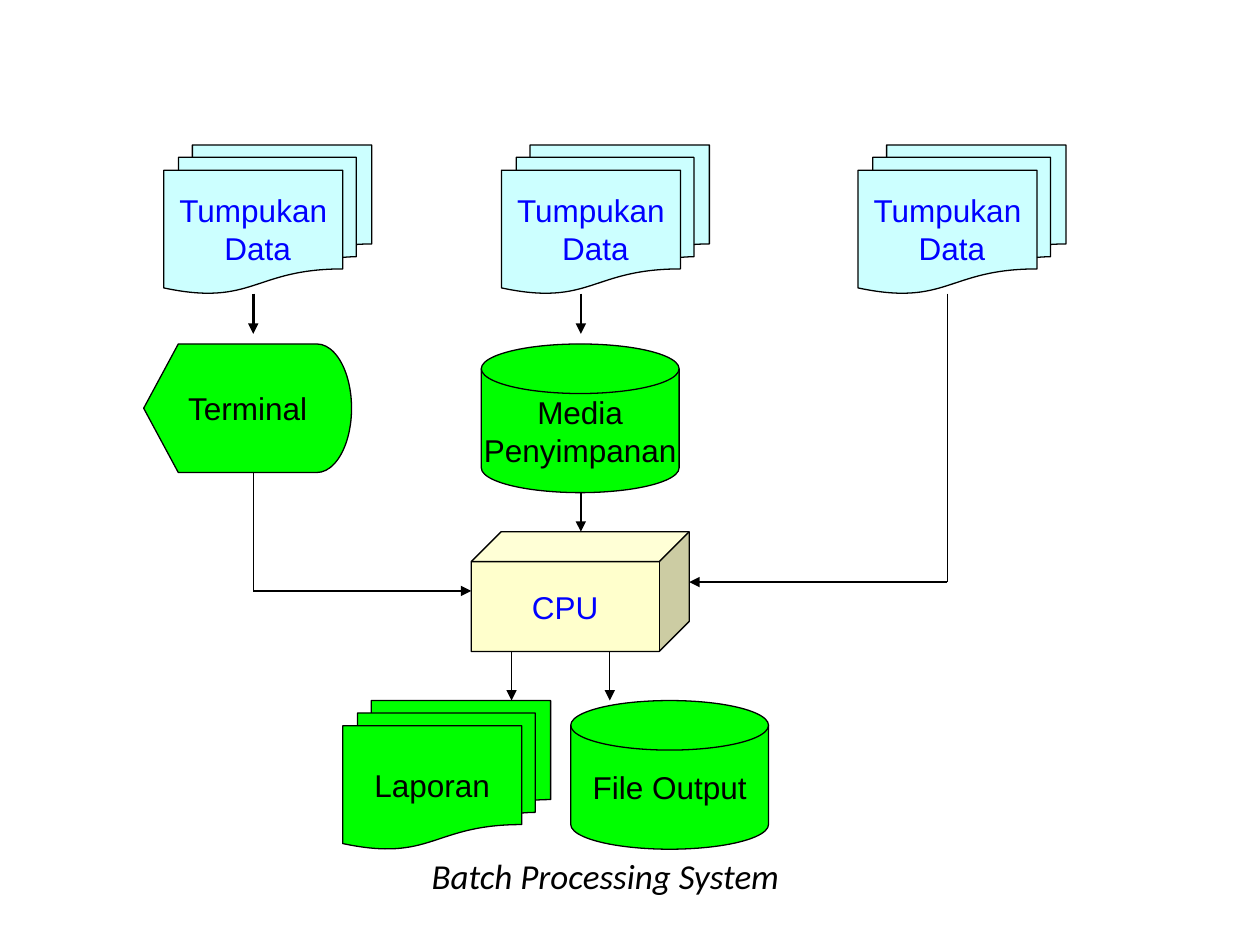
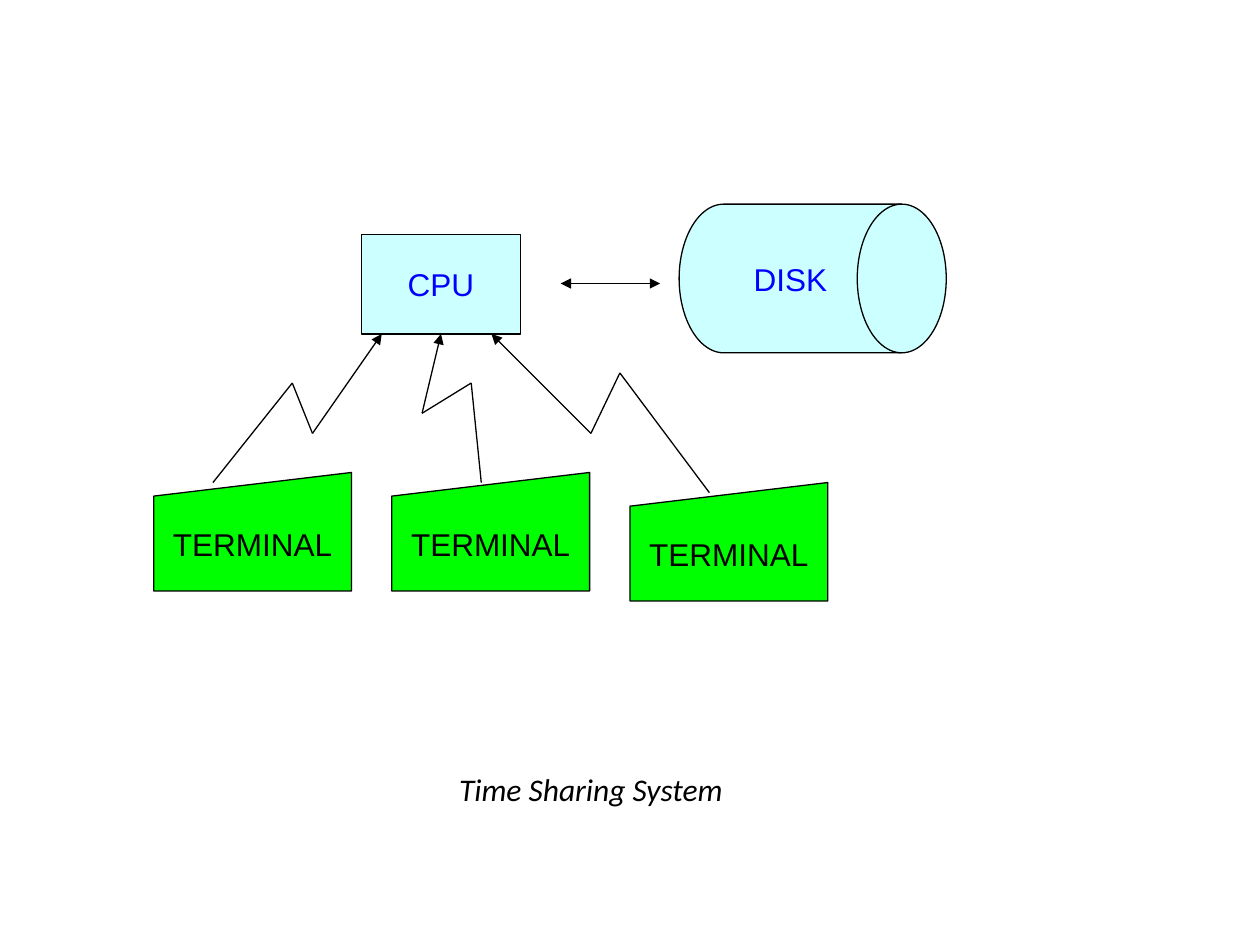
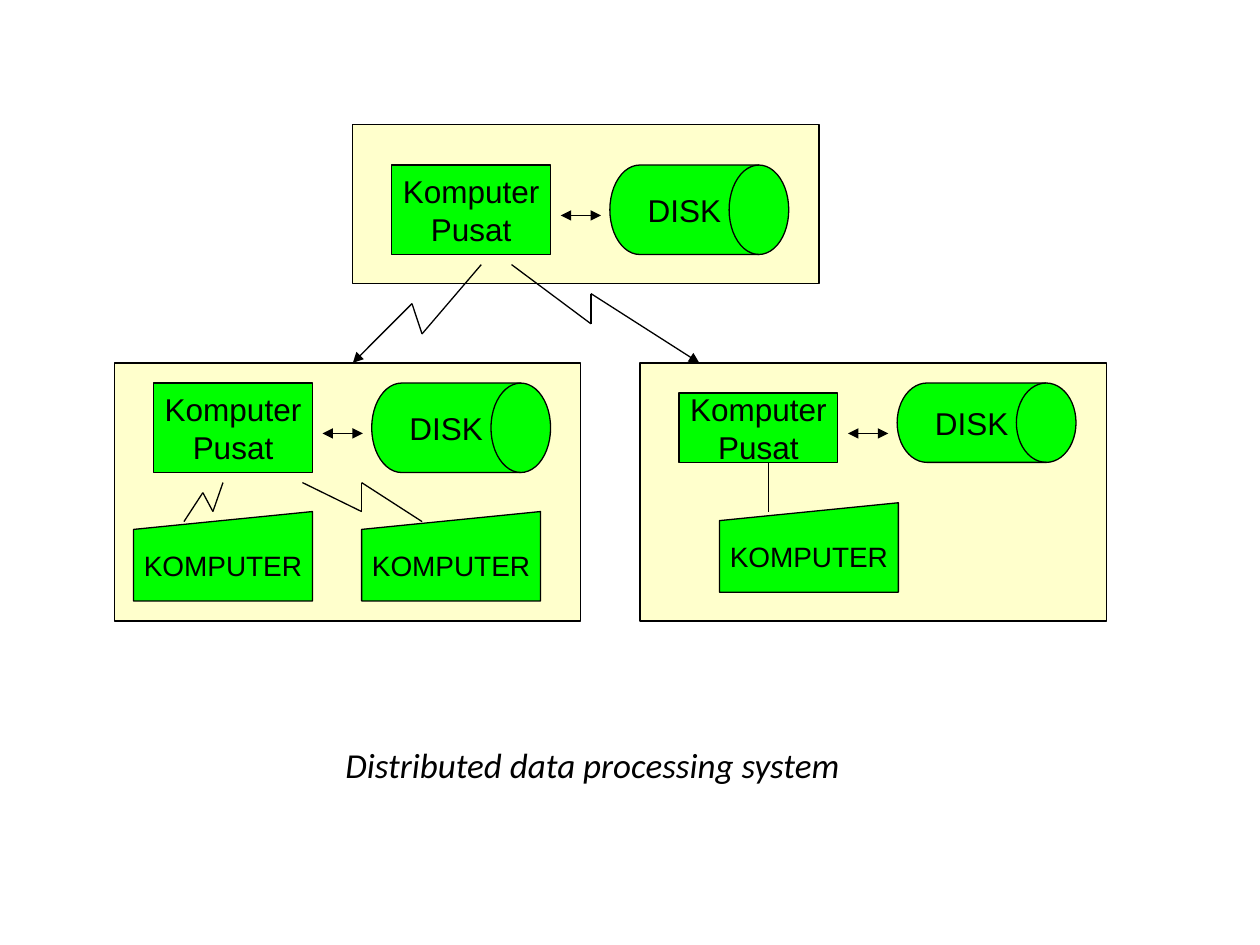
from dataclasses import dataclass

from lxml import etree
from pptx import Presentation
from pptx.dml.color import RGBColor
from pptx.enum.shapes import MSO_CONNECTOR, MSO_SHAPE
from pptx.enum.text import MSO_ANCHOR, MSO_AUTO_SIZE, PP_ALIGN
from pptx.oxml.ns import qn
from pptx.util import Inches, Pt

STRAIGHT = MSO_CONNECTOR.STRAIGHT
RECTANGLE = MSO_SHAPE.RECTANGLE
CUBE = MSO_SHAPE.CUBE
PROCESS = MSO_SHAPE.FLOWCHART_PROCESS
DOCUMENTS = MSO_SHAPE.FLOWCHART_MULTIDOCUMENT
STORAGE = MSO_SHAPE.FLOWCHART_MAGNETIC_DISK
DRUM = MSO_SHAPE.FLOWCHART_DIRECT_ACCESS_STORAGE
DISPLAY = MSO_SHAPE.FLOWCHART_DISPLAY
MANUAL_INPUT = MSO_SHAPE.FLOWCHART_MANUAL_INPUT
MIDDLE, TOP = MSO_ANCHOR.MIDDLE, MSO_ANCHOR.TOP
CENTER, LEFT = PP_ALIGN.CENTER, PP_ALIGN.LEFT
NO_AUTOFIT = MSO_AUTO_SIZE.NONE
TITLE_ONLY = 5
BOTTOM_SIDE = 2


@dataclass(frozen=True)
class Theme:
    black: str = "000000"
    blue: str = "0000FF"
    aqua: str = "CCFFFF"
    green: str = "00FF00"
    cream: str = "FFFFCC"
    label_font: str = "Arial"
    title_font: str = "Calibri"
    title_size: int = 20
    label_size: int = 18
    small_size: int = 16
    thin: float = 0.75
    thick: float = 1.5


THEME = Theme()


@dataclass(frozen=True)
class Box:
    left: float
    top: float
    width: float
    height: float

    def inner(self, left, top, width, height):
        return Box(self.left + left, self.top + top, width, height)

    def point(self, across, down):
        return Inches(self.left + across), Inches(self.top + down)

    def lengths(self):
        return [Inches(length) for length in (self.left, self.top, self.width, self.height)]


def write_text(frame, text, *, font=THEME.label_font, size=THEME.label_size, color=THEME.black,
               italic=False, align=CENTER, anchor=MIDDLE, wrap=False, line_spacing=None,
               space_before=0):
    frame.word_wrap = wrap
    frame.auto_size = NO_AUTOFIT
    frame.vertical_anchor = anchor
    for index, line in enumerate(text.split("\n")):
        paragraph = frame.add_paragraph() if index else frame.paragraphs[0]
        paragraph.alignment = align
        paragraph.line_spacing = line_spacing
        paragraph.space_before = Pt(space_before)
        run = paragraph.add_run()
        run.text = line
        run.font.name = font
        run.font.size = Pt(size)
        run.font.italic = italic
        run.font.color.rgb = RGBColor.from_string(color)


def add_node(slide, kind, box, text="", fill=THEME.green, **text_format):
    shape = slide.shapes.add_shape(kind, *box.lengths())
    shape.shadow.inherit = False
    shape.fill.solid()
    shape.fill.fore_color.rgb = RGBColor.from_string(fill)
    shape.line.color.rgb = RGBColor.from_string(THEME.black)
    shape.line.width = Pt(THEME.thin)
    if text:
        write_text(shape.text_frame, text, **text_format)
    return shape


def add_line(slide, start, end, width, arrows):
    connector = slide.shapes.add_connector(STRAIGHT, *start, *end)
    connector.line.color.rgb = RGBColor.from_string(THEME.black)
    connector.line.width = Pt(width)
    properties = connector.element.spPr
    etree.SubElement(properties, qn("a:effectLst"))
    for arrow in arrows:
        etree.SubElement(properties.find(qn("a:ln")), qn(arrow), type="triangle")
    return connector


def add_route(slide, box, points, width=THEME.thin, arrows=("a:tailEnd",)):
    places = [box.point(*point) for point in points]
    for start, end in zip(places[:-2], places[1:-1]):
        add_line(slide, start, end, width, ())
    return add_line(slide, places[-2], places[-1], width, arrows)


def add_double_arrow(slide, box, left, right, height):
    add_route(slide, box, [(left, height), (right, height)], arrows=("a:headEnd", "a:tailEnd"))


def add_titled_slide(presentation, title, box, **text_format):
    slide = presentation.slides.add_slide(presentation.slide_layouts[TITLE_ONLY])
    placeholder = slide.shapes.title
    placeholder.left, placeholder.top, placeholder.width, placeholder.height = box.lengths()
    title_format = {"font": THEME.title_font, "size": THEME.title_size, "italic": True, "wrap": True}
    write_text(placeholder.text_frame, title, **{**title_format, **text_format})
    return slide


def add_batch_inputs(slide, box):
    for left in (0.16, 2.84, 5.67):
        add_node(slide, DOCUMENTS, box.inner(left, 0, 1.65, 1.18), "Tumpukan\n Data",
                 fill=THEME.aqua, color=THEME.blue)
    for across in (0.87, 3.47):
        add_route(slide, box, [(across, 1.18), (across, 1.5)], width=THEME.thick)
    add_node(slide, DISPLAY, box.inner(0, 1.58, 1.65, 1.02), "Terminal")
    add_node(slide, STORAGE, box.inner(2.68, 1.58, 1.57, 1.18), "Media\nPenyimpanan")


def add_batch_processor(slide, box):
    add_node(slide, CUBE, box.inner(1.73, 1.89, 1.73, 0.95), "CPU",
             fill=THEME.cream, color=THEME.blue)
    add_route(slide, box, [(2.6, 1.58), (2.6, 1.89)], width=THEME.thick)
    add_route(slide, box, [(0, 1.42), (0, 2.36), (1.73, 2.36)])
    add_route(slide, box, [(5.51, 0), (5.51, 2.29), (3.46, 2.29)])


def add_batch_outputs(slide, box):
    add_node(slide, DOCUMENTS, box.inner(0, 0.39, 1.65, 1.18), "Laporan")
    add_node(slide, STORAGE, box.inner(1.81, 0.39, 1.57, 1.18), "File Output")
    for across in (1.34, 2.12):
        add_route(slide, box, [(across, 0), (across, 0.39)])


def build_batch_slide(presentation):
    slide = add_titled_slide(presentation, "Batch Processing System", Box(2.72, 6.59, 4.17, 0.71))
    add_batch_inputs(slide, Box(1.14, 1.15, 7.32, 2.76))
    add_batch_processor(slide, Box(2.01, 2.33, 5.51, 2.84))
    add_batch_outputs(slide, Box(2.72, 5.17, 3.38, 1.57))


def add_shared_processor(slide, box):
    cpu = add_node(slide, PROCESS, box.inner(0, 0.24, 1.26, 0.79), "CPU",
                   fill=THEME.aqua, color=THEME.blue)
    add_node(slide, DRUM, box.inner(2.52, 0, 2.12, 1.18), "DISK",
             fill=THEME.aqua, color=THEME.blue)
    add_double_arrow(slide, box, 1.58, 2.37, 0.63)
    return cpu


def add_terminals(slide, box, cpu):
    for index, top in enumerate((1.1, 1.1, 1.18)):
        add_node(slide, MANUAL_INPUT, box.inner(index * 1.89, top, 1.57, 0.94), "TERMINAL")
    add_route(slide, box, [(0.47, 1.18), (1.1, 0.39), (1.26, 0.79), (1.81, 0)])
    middle = add_route(slide, box, [(2.6, 1.18), (2.52, 0.39), (2.13, 0.63), (2.28, 0)])
    middle.end_connect(cpu, BOTTOM_SIDE)
    add_route(slide, box, [(4.41, 1.26), (3.7, 0.31), (3.47, 0.79), (2.68, 0)])


def build_time_sharing_slide(presentation):
    slide = add_titled_slide(presentation, "Time Sharing System", Box(3.35, 5.95, 2.68, 0.63),
                             size=THEME.label_size)
    cpu = add_shared_processor(slide, Box(2.87, 1.62, 4.64, 1.18))
    add_terminals(slide, Box(1.22, 2.65, 5.35, 2.12), cpu)


def add_site(slide, box, computer_top, disk_top, computer_height=0.71, disk_height=0.71,
             workstations=(), wires=()):
    add_node(slide, RECTANGLE, box, fill=THEME.cream)
    add_node(slide, PROCESS, box.inner(0.31, computer_top, 1.26, computer_height),
             "Komputer\nPusat")
    add_node(slide, DRUM, box.inner(2.04, disk_top, 1.42, disk_height), "DISK")
    add_double_arrow(slide, box, 1.65, 1.97, disk_top + 0.4)
    for left, top in workstations:
        add_node(slide, MANUAL_INPUT, box.inner(left, top, 1.42, 0.71), "KOMPUTER",
                 size=THEME.small_size)
    for wire in wires:
        add_route(slide, box, wire, arrows=())


def add_site_links(slide, box):
    add_route(slide, box, [(1.02, 0), (0.55, 0.55), (0.47, 0.31), (0, 0.78)])
    add_route(slide, box, [(1.26, 0), (1.89, 0.47), (1.89, 0.23), (2.75, 0.78)])


def build_distributed_slide(presentation):
    slide = add_titled_slide(presentation, "Distributed data processing system",
                             Box(2.64, 5.89, 4.65, 0.46), align=LEFT, anchor=TOP,
                             line_spacing=0.9, space_before=4)
    add_site(slide, Box(2.8, 0.99, 3.7, 1.26), 0.32, 0.32)
    add_site(slide, Box(0.91, 2.88, 3.7, 2.05), 0.16, 0.16,
             workstations=[(0.15, 1.18), (1.96, 1.18)],
             wires=[[(0.55, 1.26), (0.7, 1.03), (0.78, 1.18), (0.86, 0.95)],
                    [(2.44, 1.26), (1.96, 0.95), (1.96, 1.18), (1.49, 0.95)]])
    add_site(slide, Box(5.08, 2.88, 3.7, 2.05), 0.24, 0.16,
             computer_height=0.55, disk_height=0.63,
             workstations=[(0.63, 1.11)],
             wires=[[(1.02, 1.18), (1.02, 0.79)]])
    add_site_links(slide, Box(2.8, 2.1, 2.75, 0.78))


def main():
    presentation = Presentation()
    presentation.slide_width = Inches(10)
    presentation.slide_height = Inches(7.5)
    build_batch_slide(presentation)
    build_time_sharing_slide(presentation)
    build_distributed_slide(presentation)
    presentation.save("out.pptx")


if __name__ == "__main__":
    main()
